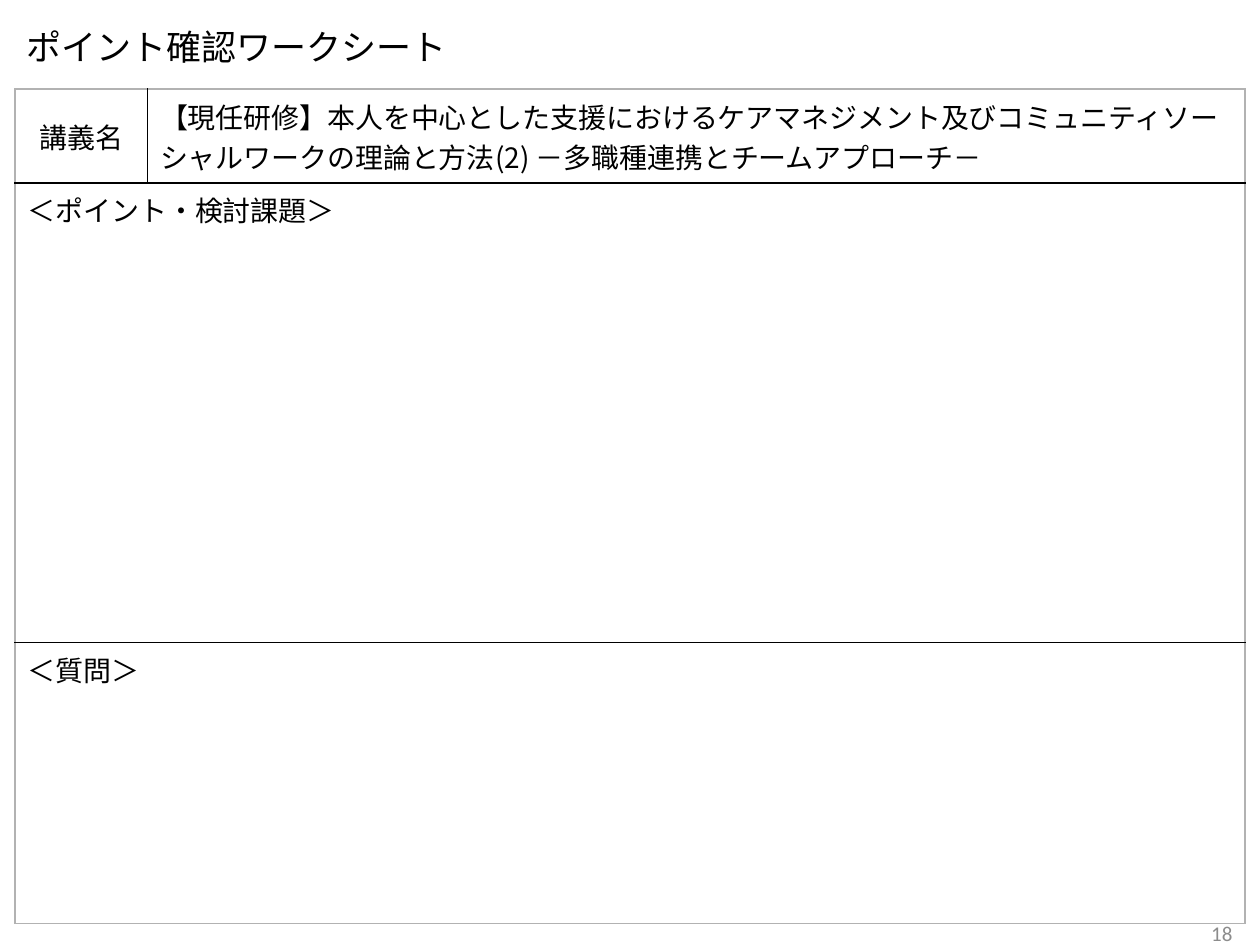
import pptx
import pptx.dml.color
import pptx.enum.text
import pptx.oxml
import pptx.oxml.ns
import pptx.util
from pptx.util import Inches

JAPANESE = "Noto Sans CJK JP"
ALIGN = pptx.enum.text.PP_ALIGN
ANCHOR = pptx.enum.text.MSO_ANCHOR
BLACK, GRAY = "000000", "B2B2B2"
FRAME, RULE, HEAVY_RULE = (GRAY, 1.25), (BLACK, 1), (BLACK, 1.5)


def color(value):
    return pptx.dml.color.RGBColor.from_string(value)


def write(frame, text, size=16, font=JAPANESE, ink=BLACK, **paragraph_format):
    frame.word_wrap = True
    paragraph = frame.paragraphs[0]
    for key, value in paragraph_format.items():
        setattr(paragraph, key, value)
    run = paragraph.add_run()
    run.text = text
    for key, value in {"size": pptx.util.Pt(size), "name": font}.items():
        setattr(run.font, key, value)
    run.font.color.rgb = color(ink)
    east_asian = pptx.oxml.parse_xml(
        f'<a:ea {pptx.oxml.ns.nsdecls("a")} typeface="{font}"/>')
    run.font._element.find(pptx.oxml.ns.qn("a:latin")).addnext(east_asian)


def add_label(slide, box, text, **text_format):
    frame = slide.shapes.add_textbox(*map(Inches, box)).text_frame
    frame.vertical_anchor = ANCHOR.MIDDLE
    write(frame, text, **text_format)


def set_borders(cell, **borders):
    properties = cell._tc.get_or_add_tcPr()
    for index, (side, (ink, width)) in enumerate(borders.items()):
        properties.insert(index, pptx.oxml.parse_xml(
            f'<a:ln{side} {pptx.oxml.ns.nsdecls("a")} w="{pptx.util.Pt(width)}">'
            f'<a:solidFill><a:srgbClr val="{ink}"/></a:solidFill></a:ln{side}>'))


def add_worksheet(slide, box):
    column_widths = [1.05, 8.71]
    row_heights = [0.74, 3.65, 2.23]
    table = slide.shapes.add_table(3, 2, *map(Inches, box)).table
    for key in ("first_row", "horz_banding"):
        setattr(table, key, False)
    for column, width in zip(table.columns, column_widths):
        column.width = Inches(width)
    for row, height in zip(table.rows, row_heights):
        row.height = Inches(height)

    row_rules = [FRAME, HEAVY_RULE, RULE, FRAME]
    for row_index in range(3):
        column_rules = [FRAME, RULE if row_index == 0 else FRAME, FRAME]
        for column_index in range(2):
            cell = table.cell(row_index, column_index)
            cell.fill.background()
            right = column_rules[column_index + 1]
            set_borders(cell, L=column_rules[column_index], R=right,
                        T=row_rules[row_index], B=row_rules[row_index + 1])
        if row_index:
            table.cell(row_index, 0).merge(table.cell(row_index, 1))

    lecture_label = table.cell(0, 0)
    lecture_label.vertical_anchor = ANCHOR.MIDDLE
    write(lecture_label.text_frame, "講義名", alignment=ALIGN.CENTER)
    write(table.cell(0, 1).text_frame,
          "【現任研修】本人を中心とした支援におけるケアマネジメント及びコミュニティ"
          "ソーシャルワークの理論と方法(2) －多職種連携とチームアプローチ－")
    write(table.cell(1, 0).text_frame, "＜ポイント・検討課題＞")
    write(table.cell(2, 0).text_frame, "＜質問＞")


def main():
    presentation = pptx.Presentation()
    presentation.slide_width = Inches(10)
    presentation.slide_height = Inches(7.5)
    slide = presentation.slides.add_slide(presentation.slide_layouts[6])
    add_label(slide, (0.11, 0.2, 9, 0.38), "ポイント確認ワークシート",
              size=20, line_spacing=0.9)
    add_label(slide, (7.55, 7.21, 2.33, 0.4), "18",
              size=12, font="Calibri", ink="8C8C8C", alignment=ALIGN.RIGHT)
    add_worksheet(slide, (0.12, 0.71, 9.76, 6.62))
    presentation.save("out.pptx")


if __name__ == "__main__":
    main()
